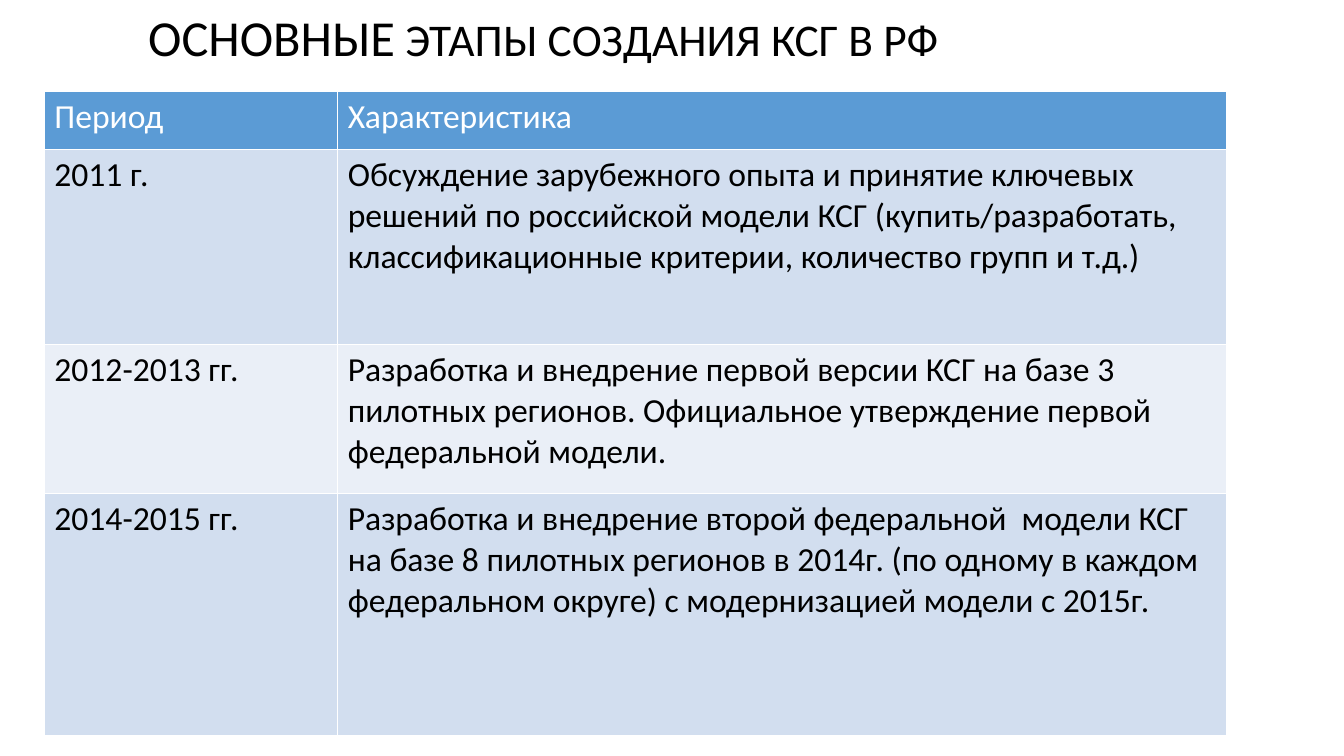
from pptx import Presentation
from pptx.dml.color import RGBColor
from pptx.enum.text import MSO_ANCHOR, MSO_AUTO_SIZE, PP_ALIGN
from pptx.util import Inches, Pt

LEFT = PP_ALIGN.LEFT
MIDDLE = MSO_ANCHOR.MIDDLE
NO_FIT = MSO_AUTO_SIZE.NONE

BLACK = RGBColor(0x00, 0x00, 0x00)
WHITE = RGBColor(0xFF, 0xFF, 0xFF)
BLUE = RGBColor(0x5B, 0x9B, 0xD5)
PALE = RGBColor(0xD2, 0xDE, 0xEF)
LIGHT = RGBColor(0xEA, 0xEF, 0xF7)

FACE = "Calibri"
COLS = [2.91, 8.82]
ROWS = [0.57, 1.94, 1.48, 2.4]
STAGES = [
    ("Период", "Характеристика"),
    ("2011 г.",
     "Обсуждение зарубежного опыта и принятие ключевых решений по "
     "российской модели КСГ (купить/разработать, классификационные "
     "критерии, количество групп и т.д.)"),
    ("2012-2013 гг.",
     "Разработка и внедрение первой версии КСГ на базе 3 пилотных "
     "регионов. Официальное утверждение первой федеральной модели."),
    ("2014-2015 гг.",
     "Разработка и внедрение второй федеральной  модели КСГ на базе "
     "8 пилотных регионов в 2014г. (по одному в каждом федеральном "
     "округе) с модернизацией модели с 2015г."),
]


def set_title(title, parts):
    title.left, title.top = Inches(1.37), 0
    title.width, title.height = Inches(9), Inches(0.8)
    frame = title.text_frame
    frame.auto_size = NO_FIT
    frame.word_wrap = True
    frame.vertical_anchor = MIDDLE
    line = frame.paragraphs[0]
    line.alignment = LEFT
    line.line_spacing = 0.9
    line.font.name = FACE
    line.font.color.rgb = BLACK
    for text, size in parts:
        run = line.add_run()
        run.text = text
        run.font.size = Pt(size)


def fill_cell(cell, text, fill, color):
    cell.fill.solid()
    cell.fill.fore_color.rgb = fill
    cell.text = text
    font = cell.text_frame.paragraphs[0].font
    font.name = FACE
    font.size = Pt(24)
    font.bold = False
    font.color.rgb = color


def add_stages(slide):
    frame = slide.shapes.add_table(
        len(ROWS), len(COLS), Inches(0.44), Inches(0.91),
        Inches(sum(COLS)), Inches(sum(ROWS)))
    table = frame.table
    for col, width in zip(table.columns, COLS):
        col.width = Inches(width)
    for row, height in zip(table.rows, ROWS):
        row.height = Inches(height)
    for i, stage in enumerate(STAGES):
        band = PALE if i % 2 else LIGHT
        fill, color = (band, BLACK) if i else (BLUE, WHITE)
        for j, text in enumerate(stage):
            fill_cell(table.cell(i, j), text, fill, color)


def main():
    deck = Presentation()
    deck.slide_width, deck.slide_height = Inches(13.33), Inches(7.5)
    slide = deck.slides.add_slide(deck.slide_layouts[5])
    set_title(slide.shapes.title,
              [("ОСНОВНЫЕ", 36), (" ЭТАПЫ СОЗДАНИЯ КСГ В РФ", 32.4)])
    add_stages(slide)
    deck.save("out.pptx")


if __name__ == "__main__":
    main()
